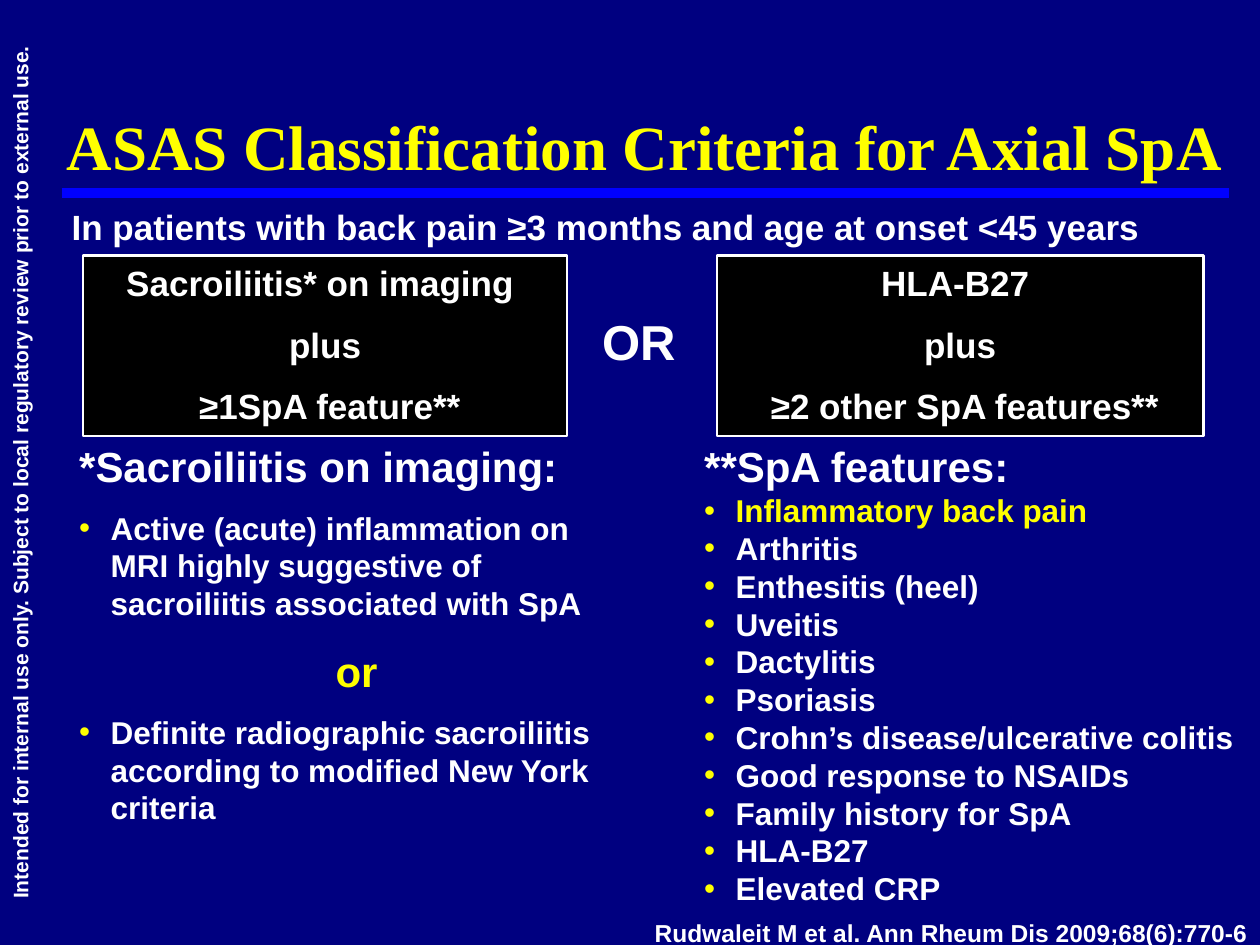
from dataclasses import dataclass
from typing import Optional

from lxml import etree
from pptx import Presentation
from pptx.dml.color import RGBColor
from pptx.enum.shapes import MSO_CONNECTOR, MSO_SHAPE
from pptx.enum.text import MSO_ANCHOR, PP_ALIGN
from pptx.oxml.ns import qn
from pptx.util import Inches, Pt

NAVY, BLUE, BLACK = "000080", "0000FF", "000000"
WHITE, YELLOW = "FFFFFF", "FFFF00"
HANGING_INDENT = 0.25
SPACE_RATIO = 0.55  # space before a paragraph, relative to its text size


@dataclass
class Line:
    text: str
    size: int
    color: str = WHITE
    font: str = "Arial"
    align: PP_ALIGN = PP_ALIGN.LEFT
    bullet: bool = False
    spaced: bool = False
    left_margin: float = 0
    line_spacing: Optional[float] = None


@dataclass
class Box:
    left: float
    top: float
    width: float
    height: float


def rgb(color: str) -> RGBColor:
    return RGBColor.from_string(color)


def add_bullet(paragraph) -> None:
    properties = paragraph._p.get_or_add_pPr()
    properties.set("indent", str(-Inches(HANGING_INDENT)))
    bullet_color = etree.SubElement(properties, qn("a:buClr"))
    etree.SubElement(bullet_color, qn("a:srgbClr"), val=YELLOW)
    etree.SubElement(properties, qn("a:buFont"), typeface="Arial")
    etree.SubElement(properties, qn("a:buChar"), char="•")


def write_lines(text_frame, lines: list[Line]) -> None:
    for index, line in enumerate(lines):
        paragraph = text_frame.paragraphs[0] if index == 0 else text_frame.add_paragraph()
        paragraph.text = line.text
        paragraph.alignment = line.align
        if line.line_spacing:
            paragraph.line_spacing = line.line_spacing
        paragraph.space_before = Pt(line.size * SPACE_RATIO if line.spaced else 0)
        margin = HANGING_INDENT if line.bullet else line.left_margin
        paragraph._p.get_or_add_pPr().set("marL", str(Inches(margin)))
        if line.bullet:
            add_bullet(paragraph)
        for run in paragraph.runs:
            run.font.name = line.font
            run.font.size = Pt(line.size)
            run.font.bold = True
            run.font.color.rgb = rgb(line.color)


def add_text(slide, box: Box, lines: list[Line], wrap: bool = True):
    shape = slide.shapes.add_textbox(
        Inches(box.left), Inches(box.top), Inches(box.width), Inches(box.height))
    shape.text_frame.word_wrap = wrap
    write_lines(shape.text_frame, lines)
    return shape


def add_criteria_box(slide, box: Box, texts: list[str]) -> None:
    shape = slide.shapes.add_shape(
        MSO_SHAPE.RECTANGLE,
        Inches(box.left), Inches(box.top), Inches(box.width), Inches(box.height))
    shape.shadow.inherit = False
    shape.fill.solid()
    shape.fill.fore_color.rgb = rgb(BLACK)
    shape.line.color.rgb = rgb(WHITE)
    shape.line.width = Pt(1.5)
    shape.text_frame.word_wrap = True
    shape.text_frame.vertical_anchor = MSO_ANCHOR.TOP
    write_lines(shape.text_frame, [
        Line(text, 20, align=PP_ALIGN.CENTER, spaced=index > 0)
        for index, text in enumerate(texts)])


def add_title(slide) -> None:
    title = add_text(slide, Box(0.53, 0.37, 9.47, 1.09), [
        Line("ASAS Classification Criteria for Axial SpA", 36, YELLOW,
             "Times New Roman", line_spacing=0.9)])
    frame = title.text_frame
    frame.vertical_anchor = MSO_ANCHOR.BOTTOM
    frame.margin_left = frame.margin_right = frame.margin_top = frame.margin_bottom = 0


def add_title_rule(slide) -> None:
    rule = slide.shapes.add_connector(
        MSO_CONNECTOR.STRAIGHT, Inches(0.49), Inches(1.53), Inches(9.75), Inches(1.53))
    rule.line.color.rgb = rgb(BLUE)
    rule.line.width = Pt(6)
    etree.SubElement(rule._element.spPr, qn("a:effectLst"))


def main() -> None:
    presentation = Presentation()
    presentation.slide_width, presentation.slide_height = Inches(10), Inches(7.5)
    slide = presentation.slides.add_slide(presentation.slide_layouts[6])
    slide.background.fill.solid()
    slide.background.fill.fore_color.rgb = rgb(NAVY)

    add_title_rule(slide)
    side_note = add_text(slide, Box(-3.59, 3.6, 7.5, 0.3), [
        Line("Intended for internal use only. Subject to local regulatory review "
             "prior to external use.", 12, align=PP_ALIGN.CENTER)])
    side_note.rotation = 270
    add_title(slide)
    add_text(slide, Box(0.47, 1.58, 8.74, 0.44), [
        Line("In patients with back pain ≥3 months and age at onset <45 years", 20)],
        wrap=False)

    add_criteria_box(slide, Box(0.66, 2.03, 3.84, 1.43),
                     ["Sacroiliitis* on imaging ", "plus", " ≥1SpA feature**"])
    add_criteria_box(slide, Box(5.69, 2.03, 3.86, 1.43),
                     ["HLA-B27 ", "plus", " ≥2 other SpA features**"])
    add_text(slide, Box(4.68, 2.42, 0.79, 0.57), [Line("OR", 28)], wrap=False)

    features = ["Arthritis", "Enthesitis (heel)", "Uveitis", "Dactylitis", "Psoriasis",
                "Crohn’s disease/ulcerative colitis", "Good response to NSAIDs",
                "Family history for SpA", "HLA-B27", "Elevated CRP"]
    add_text(slide, Box(5.49, 3.45, 4.61, 3.84), [
        Line("**SpA features:", 24),
        Line("Inflammatory back pain", 18, YELLOW, bullet=True),
        *(Line(feature, 18, bullet=True) for feature in features)])

    add_text(slide, Box(0.53, 3.51, 4.35, 3.17), [
        Line("*Sacroiliitis on imaging:", 24, line_spacing=0.85),
        Line("Active (acute) inflammation on MRI highly suggestive of sacroiliitis "
             "associated with SpA", 18, bullet=True, spaced=True),
        Line("or", 24, YELLOW, align=PP_ALIGN.CENTER, spaced=True,
             left_margin=HANGING_INDENT),
        Line("Definite radiographic sacroiliitis according to modified New York "
             "criteria", 18, bullet=True, spaced=True)])

    add_text(slide, Box(4.69, 7.24, 5.31, 0.34), [
        Line("Rudwaleit M et al. Ann Rheum Dis 2009;68(6):770-6", 14,
             align=PP_ALIGN.RIGHT)])
    presentation.save("out.pptx")


if __name__ == "__main__":
    main()
